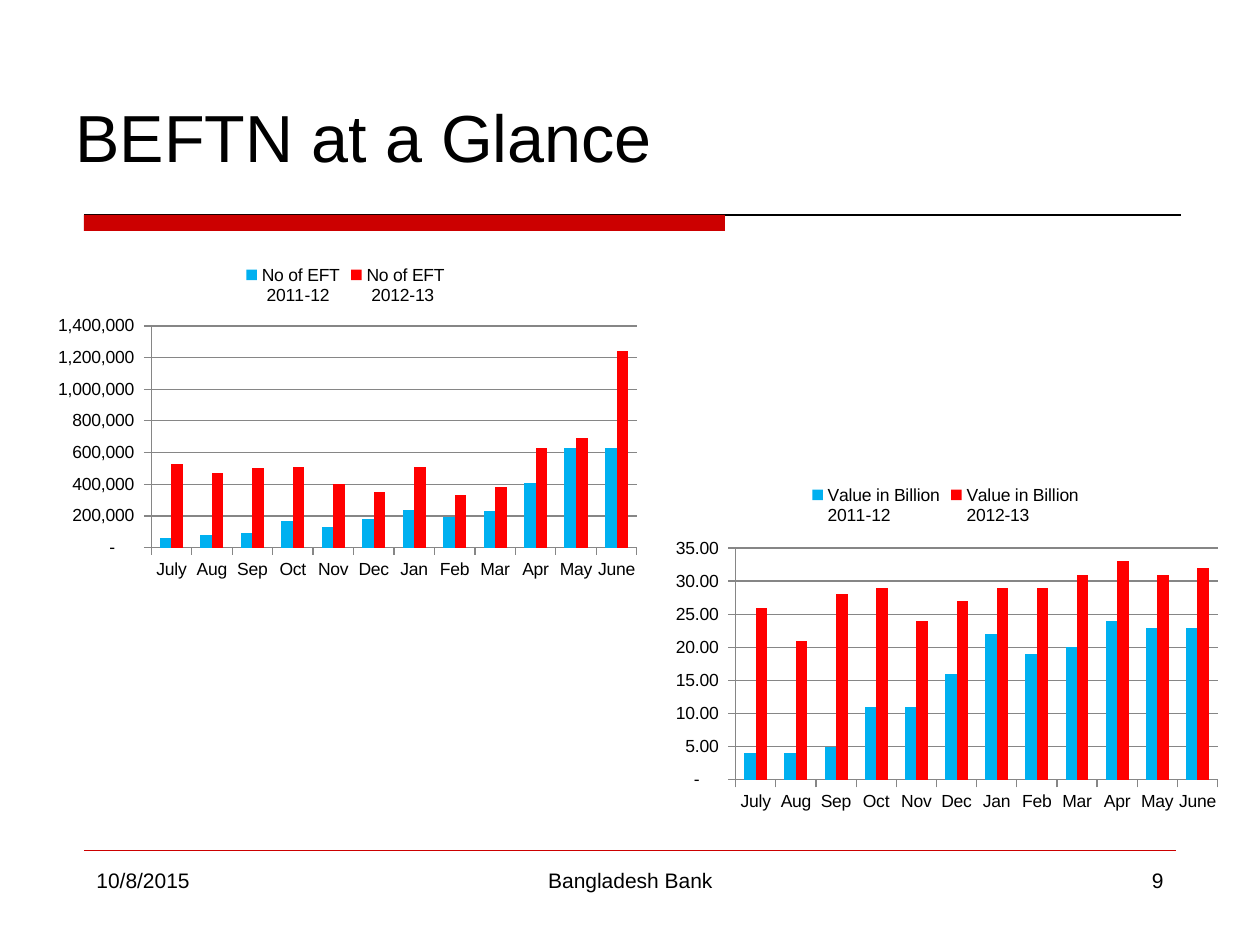
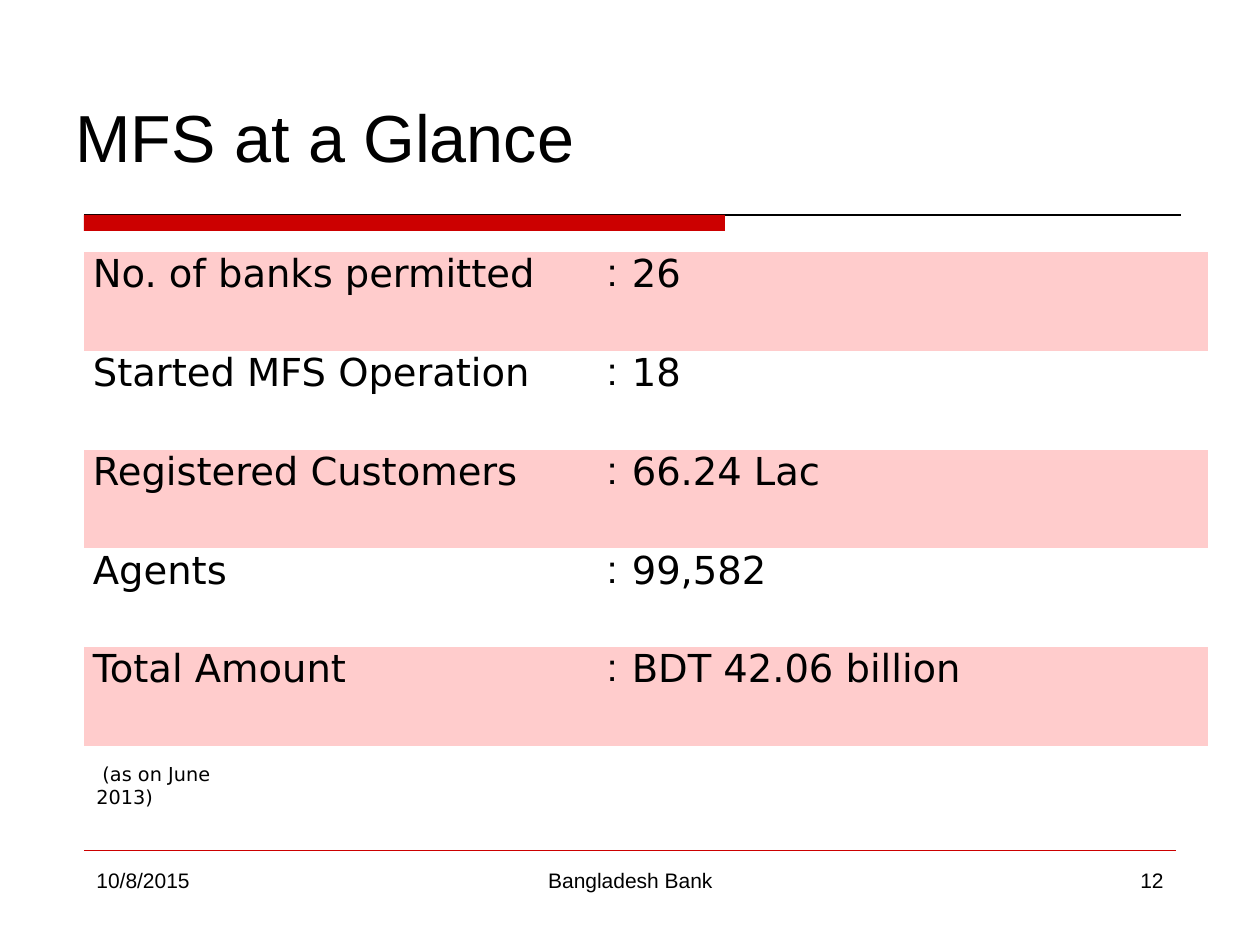
import lxml.etree
import pptx
import pptx.chart.data
import pptx.dml.color
import pptx.enum.chart
import pptx.enum.shapes
import pptx.enum.text
import pptx.oxml
import pptx.oxml.ns
import pptx.util

EMU_PER_PX = 914400 / 126
BLACK, RED, PINK, GRID = "000000", "CC0000", "FFCCCC", "868686"
SERIES_COLORS = ("00B0F0", "FF0000")
SANS, WIDE = "Arial", "DejaVu Sans"
ALIGN = pptx.enum.text.PP_ALIGN
ANCHOR = pptx.enum.text.MSO_ANCHOR
PLAIN_TABLE = "{2D5ABB26-0587-4C30-8999-92F81FD0307C}"
MONTHS = ("July", "Aug", "Sep", "Oct", "Nov", "Dec",
          "Jan", "Feb", "Mar", "Apr", "May", "June")
EFT_COUNTS = {
    "No of EFT\n 2011-12": (60000, 80000, 90000, 170000, 130000, 180000,
                            240000, 190000, 230000, 410000, 630000, 630000),
    "No of EFT\n 2012-13": (530000, 470000, 500000, 510000, 400000, 350000,
                            510000, 330000, 380000, 630000, 690000, 1240000),
}
EFT_VALUES = {
    "Value in Billion\n2011-12": (4, 4, 5, 11, 11, 16, 22, 19, 20, 24, 23, 23),
    "Value in Billion\n2012-13": (26, 21, 28, 29, 24, 27, 29, 29, 31, 33, 31, 32),
}
MFS_FACTS = (
    ("No. of banks permitted", "26"),
    ("Started MFS Operation", "18"),
    ("Registered Customers", "66.24 Lac"),
    ("Agents", "99,582"),
    ("Total Amount", "BDT 42.06 billion"),
)


def px(length):
    return pptx.util.Emu(round(length * EMU_PER_PX))


def color(value):
    return pptx.dml.color.RGBColor.from_string(value)


def write(text_frame, text, size=12, font=SANS, align=ALIGN.LEFT, space_after=0):
    paragraph = text_frame.paragraphs[0]
    paragraph.alignment = align
    paragraph.space_after = pptx.util.Pt(space_after)
    run = paragraph.add_run()
    run.text = text
    run.font.size = pptx.util.Pt(size)
    run.font.name = font
    run.font.color.rgb = color(BLACK)


def add_text(slide, box, text, anchor=ANCHOR.TOP, **text_format):
    text_frame = slide.shapes.add_textbox(*map(px, box)).text_frame
    text_frame.word_wrap = True
    text_frame.vertical_anchor = anchor
    write(text_frame, text, **text_format)


def add_rule(slide, left, right, y, line_color, width):
    rule = slide.shapes.add_connector(
        pptx.enum.shapes.MSO_CONNECTOR.STRAIGHT, px(left), px(y), px(right), px(y))
    rule.line.color.rgb = color(line_color)
    rule.line.width = pptx.util.Pt(width)
    lxml.etree.SubElement(rule._element.spPr, pptx.oxml.ns.qn("a:effectLst"))


def add_bar(slide, box, fill):
    bar = slide.shapes.add_shape(
        pptx.enum.shapes.MSO_SHAPE.RECTANGLE, *map(px, box))
    bar.shadow.inherit = False
    bar.fill.solid()
    bar.fill.fore_color.rgb = color(fill)
    bar.line.fill.background()


def add_page(presentation, title, number):
    """Add a blank slide with the shared title, bands and footer."""
    slide = presentation.slides.add_slide(presentation.slide_layouts[6])
    add_rule(slide, 84, 1181, 215, BLACK, 0.75)
    add_bar(slide, (84, 215, 641, 16), RED)
    add_rule(slide, 84, 1176, 850, RED, 0.25)
    add_text(slide, (63, 84, 1134, 98), title, anchor=ANCHOR.BOTTOM, size=38)
    add_text(slide, (84, 861, 273, 66), "10/8/2015")
    add_text(slide, (431, 861, 399, 66), "Bangladesh Bank", align=ALIGN.CENTER)
    add_text(slide, (903, 861, 273, 66), str(number), align=ALIGN.RIGHT)
    return slide


def set_plot_layout(chart, box, plot_box):
    left, top, width, height = box
    plot_left, plot_top, plot_width, plot_height = plot_box
    fractions = {"x": (plot_left - left) / width, "y": (plot_top - top) / height,
                 "w": plot_width / width, "h": plot_height / height}
    sizes = "".join(f'<c:{name} val="{value:.2f}"/>'
                    for name, value in fractions.items())
    plot_area = chart._chartSpace.chart.plotArea
    for layout in plot_area.findall(pptx.oxml.ns.qn("c:layout")):
        plot_area.remove(layout)
    plot_area.insert(0, pptx.oxml.parse_xml(
        f'<c:layout {pptx.oxml.ns.nsdecls("c")}><c:manualLayout>'
        '<c:layoutTarget val="inner"/><c:xMode val="edge"/><c:yMode val="edge"/>'
        f'{sizes}</c:manualLayout></c:layout>'))


def add_month_chart(slide, box, plot_box, series_values, maximum, step, digits):
    data = pptx.chart.data.CategoryChartData()
    data.categories = MONTHS
    for name, values in series_values.items():
        data.add_series(name, values)
    chart = slide.shapes.add_chart(
        pptx.enum.chart.XL_CHART_TYPE.COLUMN_CLUSTERED, *map(px, box), data).chart
    chart.has_title = False
    chart.font.name = SANS
    chart.font.size = pptx.util.Pt(10)
    chart.font.color.rgb = color(BLACK)
    chart.has_legend = True
    chart.legend.position = pptx.enum.chart.XL_LEGEND_POSITION.TOP
    chart.legend.include_in_layout = False

    plot = chart.plots[0]
    plot.gap_width = 150
    plot.overlap = 0
    plot.vary_by_categories = False
    for series, fill in zip(plot.series, SERIES_COLORS):
        series.format.fill.solid()
        series.format.fill.fore_color.rgb = color(fill)

    value_axis = chart.value_axis
    value_axis.minimum_scale = 0
    value_axis.maximum_scale = maximum
    value_axis.major_unit = step
    value_axis.has_major_gridlines = True
    value_axis.tick_labels.number_format = (
        f'_(* {digits}_);_(* \\({digits}\\);_(* "-"??_);_(@_)')
    value_axis.tick_labels.number_format_is_linked = False
    for axis in (value_axis, chart.category_axis):
        axis.major_tick_mark = pptx.enum.chart.XL_TICK_MARK.OUTSIDE
    for lines in (value_axis, value_axis.major_gridlines, chart.category_axis):
        lines.format.line.color.rgb = color(GRID)
        lines.format.line.width = pptx.util.Pt(0.75)
    set_plot_layout(chart, box, plot_box)


def add_fact_table(slide, box, column_widths, facts):
    table = slide.shapes.add_table(
        len(facts), len(column_widths), *map(px, box)).table
    table.first_row = table.horz_banding = False
    table._tbl.tblPr.find(pptx.oxml.ns.qn("a:tableStyleId")).text = PLAIN_TABLE
    for column, width in zip(table.columns, column_widths):
        column.width = px(width)
    for row_index, (label, value) in enumerate(facts):
        for cell, text in zip(table.rows[row_index].cells, (label, ":", value)):
            cell.margin_left = cell.margin_right = px(9)
            cell.margin_top = cell.margin_bottom = 0
            if row_index % 2 == 0:
                cell.fill.solid()
                cell.fill.fore_color.rgb = color(PINK)
            else:
                cell.fill.background()
            write(cell.text_frame, text, size=22,
                  font=SANS if text == ":" else WIDE, space_after=6)


def main():
    presentation = pptx.Presentation()
    presentation.slide_width, presentation.slide_height = px(1260), px(945)

    slide = add_page(presentation, "BEFTN at a Glance", 9)
    add_month_chart(slide, (42, 252, 607, 336), (152, 327, 485, 223),
                    EFT_COUNTS, 1400000, 200000, "#,##0")
    add_month_chart(slide, (662, 472, 567, 346), (737, 548, 480, 232),
                    EFT_VALUES, 35, 5, "#,##0.00")

    slide = add_page(presentation, "MFS at a Glance", 12)
    add_fact_table(slide, (84, 252, 1124, 494), (514, 25, 585), MFS_FACTS)
    add_text(slide, (84, 756, 188, 60), " (as on June 2013)", size=11, font=WIDE)

    presentation.save("out.pptx")


if __name__ == "__main__":
    main()
